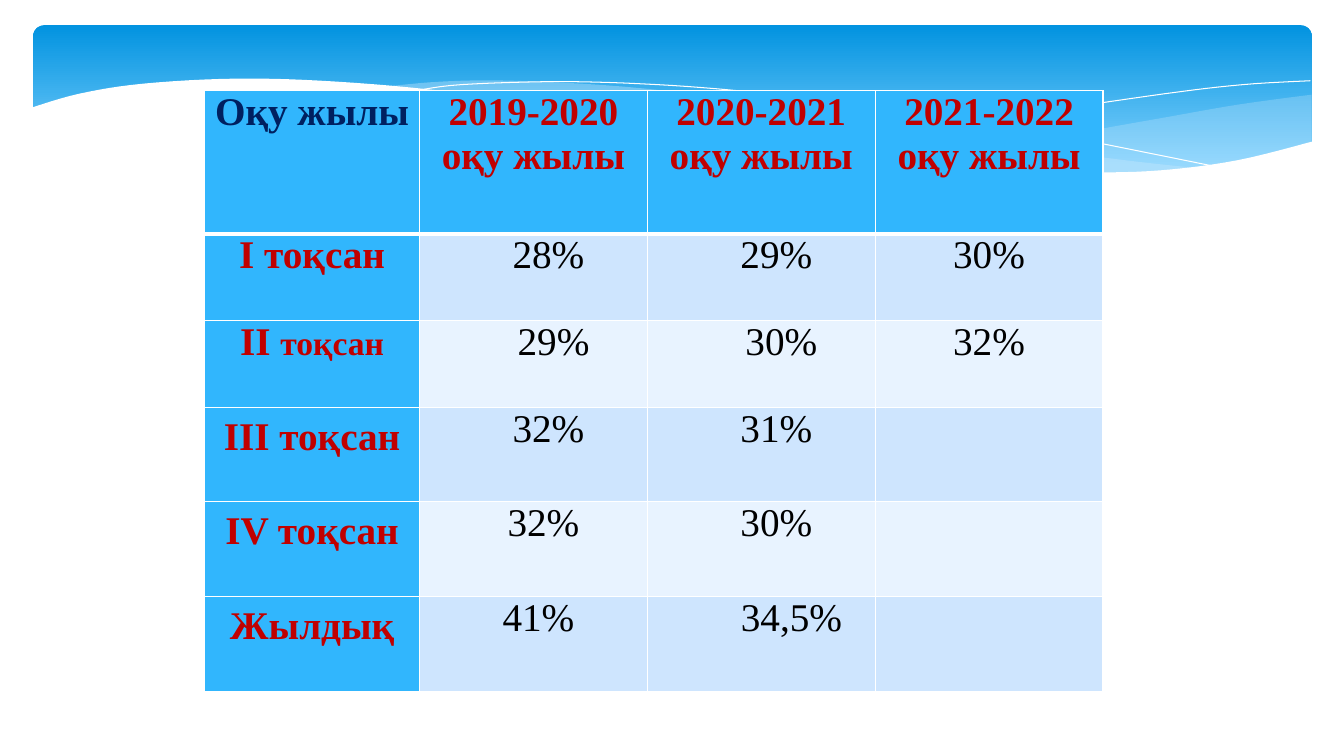
from lxml import etree
from pptx import Presentation
from pptx.dml.color import RGBColor
from pptx.enum.shapes import MSO_SHAPE
from pptx.enum.text import PP_ALIGN
from pptx.oxml.ns import qn
from pptx.util import Inches, Pt

ROUNDED = MSO_SHAPE.ROUNDED_RECTANGLE
CENTER = PP_ALIGN.CENTER

WHITE = RGBColor(0xFF, 0xFF, 0xFF)
BLACK = RGBColor(0x00, 0x00, 0x00)
NAVY = RGBColor(0x00, 0x20, 0x60)
RED = RGBColor(0xC0, 0x00, 0x00)
SKY = RGBColor(0x31, 0xB6, 0xFD)
BAND_TOP = RGBColor(0x02, 0x93, 0xE0)
BAND_BOTTOM = RGBColor(0x83, 0xD3, 0xFE)
WAVE = RGBColor(0xC6, 0xE7, 0xFC)
STRIPES = (RGBColor(0xCE, 0xE5, 0xFE), RGBColor(0xE8, 0xF3, 0xFF))

FONT = "Times New Roman"
SPACE = Inches(0.1)  # step by which values are shifted right in their cells
PADDING = Inches(0.07)

# Curve points are percentages of the header band's width and height.
RIGHT_WAVE = (
    [(100, 44.2), (94.2, 50.6), (87.9, 59.6), (79.3, 71.8), (71.6, 81.4), (67, 86.5)],
    [(67, 86.5), (74.4, 91.7), (81.9, 94.2), (88.2, 92.9), (94.2, 86.5), (100, 75)],
)
MIDDLE_WAVE = (
    [(91.2, 91), (85.4, 85.9), (75.4, 75), (63.6, 58.3), (55.8, 48.1),
     (46.2, 39.1), (37.3, 35.3), (31.9, 35.9), (27.5, 39.1)],
    [(27.5, 39.1), (35.5, 46.2), (44.6, 58.3), (56.9, 75.6), (65.8, 85.3),
     (73.3, 91.7), (81.1, 94.9), (86.6, 94.2), (91.2, 91)],
)
LONG_LINE = [(29.9, 41.7), (33.5, 37.8), (41.2, 35.9), (48.8, 37.8), (55.9, 42.3),
             (64.3, 50), (73.9, 60.9), (81, 71.2), (92.8, 90.4)]
RIGHT_LINE = [(61.9, 80.8), (70.5, 67.3), (79, 55.1), (88.5, 43.6), (94.6, 37.8),
              (99.9, 35.3)]
LOWER_EDGE = [(100.2, 73.7), (94.2, 85.9), (88.2, 92.3), (82.4, 93.6), (75.6, 91.7),
              (67.7, 86.5), (58.3, 76.3), (44.4, 57.1), (33.1, 42.9), (23.7, 35.9),
              (15.9, 34), (8.6, 37.2), (3.6, 43.6), (-0.2, 52.6)]
LOWER_CORNERS = [(-0.2, 127.6), (100.2, 127.6)]

COLUMNS = (2.13, 2.26, 2.26, 2.26)
ROWS = (1.42, 0.86, 0.86, 0.94, 0.94, 0.94)
YEARS = ("2019-2020 оқу жылы", "2020-2021 оқу жылы", "2021-2022 оқу жылы")
# Label runs with sizes, space above the label, then values with their shift in steps.
TERMS = (
    ([("І тоқсан", 28)], 0, [("28%", 3), ("29%", 3), ("30%", 0)]),
    ([("ІІ ", 28), ("тоқсан", 24)], 0, [("29%", 4), ("30%", 4), ("32%", 0)]),
    ([("ІІІ тоқсан", 28)], 0.08, [("32%", 3), ("31%", 3), ("", 0)]),
    ([("ІV тоқсан", 28)], 0.08, [("32%", 2), ("30%", 3), ("", 0)]),
    ([("Жылдық", 28)], 0.08, [("41%", 1), ("34,5%", 6), ("", 0)]),
)


def smooth(points, steps=6):
    """Return a Catmull-Rom curve through the points as a dense polyline."""
    padded = [points[0], *points, points[-1]]
    curve = [points[0]]
    for a, b, c, d in zip(padded, padded[1:], padded[2:], padded[3:]):
        for step in range(1, steps + 1):
            t = step / steps
            curve.append(tuple(
                q + t / 2 * (r - p + t * (2 * p - 5 * q + 4 * r - s
                                          + t * (3 * (q - r) + s - p)))
                for p, q, r, s in zip(a, b, c, d)))
    return curve


def add_outline(slide, box, points, closed):
    left, top, width, height = box
    spots = [(round(left + width * x / 100), round(top + height * y / 100))
             for x, y in points]
    builder = slide.shapes.build_freeform(*spots[0], scale=1.0)
    builder.add_line_segments(spots[1:], close=closed)
    outline = builder.convert_to_shape()
    outline.shadow.inherit = False
    return outline


def add_area(slide, box, points, color, opacity=100):
    area = add_outline(slide, box, points, True)
    area.fill.solid()
    area.fill.fore_color.rgb = color
    area.line.fill.background()
    if opacity < 100:
        tint = area.fill._xPr.find(f".//{qn('a:srgbClr')}")
        etree.SubElement(tint, qn("a:alpha"), val=str(opacity * 1000))


def add_header_band(slide, box):
    band = slide.shapes.add_shape(ROUNDED, *box)
    band.adjustments[0] = 0.07
    band.shadow.inherit = False
    band.line.fill.background()
    band.fill.gradient()
    band.fill.gradient_angle = 270
    for stop, color, position in zip(band.fill.gradient_stops,
                                     (BAND_TOP, BAND_BOTTOM), (0, 0.9)):
        stop.color.rgb = color
        stop.position = position

    for (upper, lower), opacity in ((RIGHT_WAVE, 29), (MIDDLE_WAVE, 40)):
        add_area(slide, box, smooth(upper) + smooth(lower), WAVE, opacity)
    for points in (LONG_LINE, RIGHT_LINE):
        strand = add_outline(slide, box, smooth(points), False)
        strand.fill.background()
        strand.line.color.rgb = WHITE
        strand.line.width = Pt(0)
    add_area(slide, box, smooth(LOWER_EDGE) + LOWER_CORNERS, WHITE)


def add_borders(cell, top, bottom):
    properties = cell._tc.get_or_add_tcPr()
    sides = (("a:lnL", 1), ("a:lnR", 1), ("a:lnT", top), ("a:lnB", bottom))
    for index, (side, points) in enumerate(sides):
        border = etree.Element(qn(side), w=str(Pt(points)))
        fill = etree.SubElement(border, qn("a:solidFill"))
        etree.SubElement(fill, qn("a:srgbClr"), val=str(WHITE))
        properties.insert(index, border)


def fill_cell(cell, runs, color, bold, background, shift=0, above=0):
    margins = {"margin_left": PADDING + shift * SPACE, "margin_right": PADDING,
               "margin_top": Inches(above), "margin_bottom": 0}
    for name, value in margins.items():
        setattr(cell, name, value)
    cell.fill.solid()
    cell.fill.fore_color.rgb = background
    paragraph = cell.text_frame.paragraphs[0]
    paragraph.alignment = CENTER
    for text, size in runs:
        run = paragraph.add_run()
        run.text = text
        for name, value in {"name": FONT, "size": Pt(size), "bold": bold}.items():
            setattr(run.font, name, value)
        run.font.color.rgb = color


def add_results_table(slide, left, top):
    table = slide.shapes.add_table(
        len(ROWS), len(COLUMNS), left, top,
        Inches(sum(COLUMNS)), Inches(sum(ROWS))).table
    table.first_row = table.horz_banding = False
    for column, width in zip(table.columns, COLUMNS):
        column.width = Inches(width)
    for row, height in zip(table.rows, ROWS):
        row.height = Inches(height)

    fill_cell(table.cell(0, 0), [("Оқу жылы", 28)], NAVY, True, SKY)
    for column, year in enumerate(YEARS, 1):
        fill_cell(table.cell(0, column), [(year, 28)], RED, True, SKY)
    for row, (label, above, values) in enumerate(TERMS, 1):
        fill_cell(table.cell(row, 0), label, RED, True, SKY, above=above)
        for column, (value, shift) in enumerate(values, 1):
            runs = [(value, 28)] if value else []
            fill_cell(table.cell(row, column), runs, BLACK, False,
                      STRIPES[(row - 1) % 2], shift)
    for row in range(len(ROWS)):
        for column in range(len(COLUMNS)):
            add_borders(table.cell(row, column), top=3 if row == 1 else 1,
                        bottom=3 if row == 0 else 1)


def main():
    deck = Presentation()
    deck.slide_width, deck.slide_height = Inches(13.33), Inches(7.5)
    slide = deck.slides.add_slide(deck.slide_layouts[6])
    add_header_band(slide, [Inches(n) for n in (0.33, 0.25, 12.68, 1.56)])
    add_results_table(slide, Inches(2.03), Inches(0.9))
    deck.save("out.pptx")


if __name__ == "__main__":
    main()
